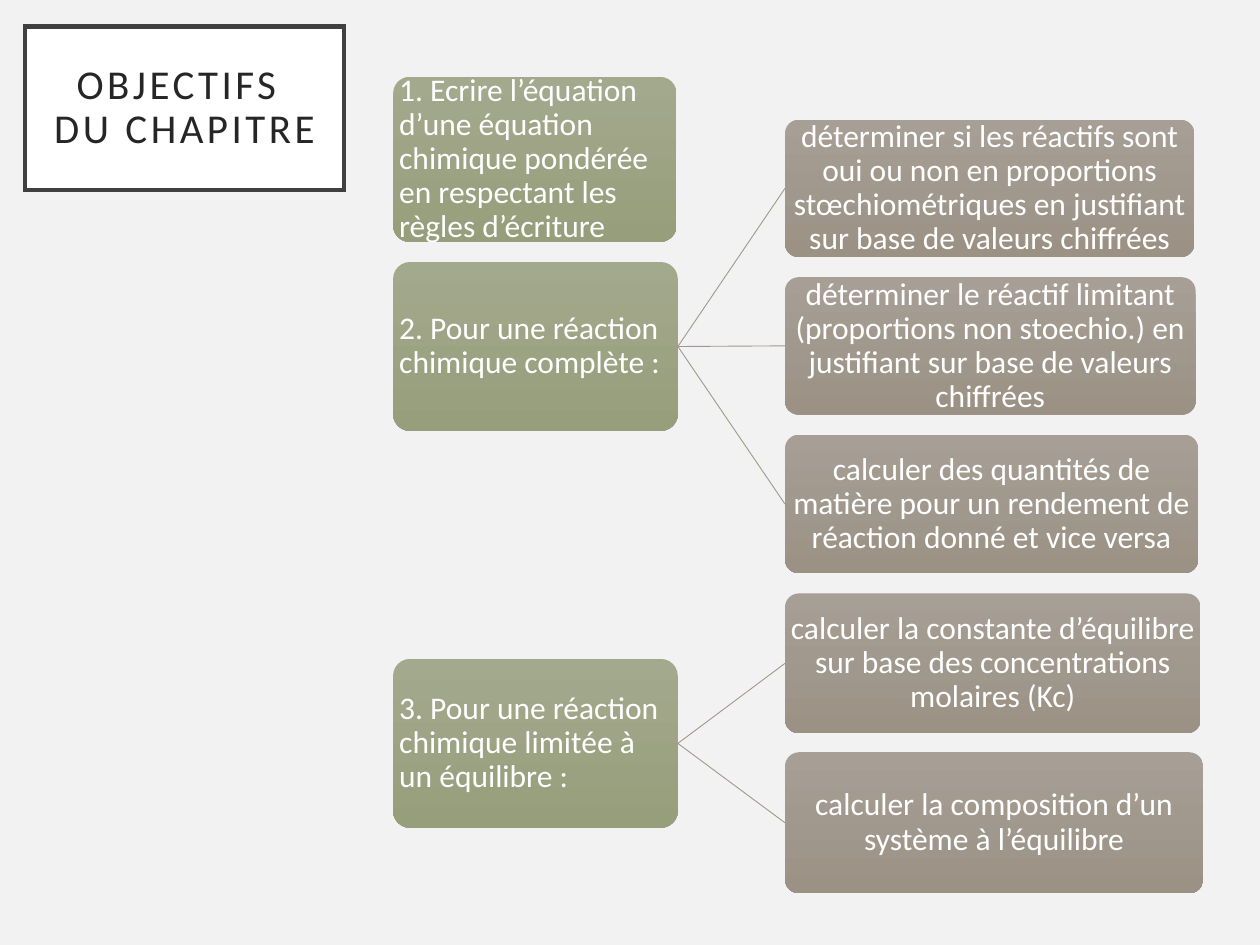
from pptx import Presentation
from pptx.dml.color import RGBColor
from pptx.enum.shapes import MSO_CONNECTOR, MSO_SHAPE
from pptx.enum.text import MSO_ANCHOR, PP_ALIGN
from pptx.oxml.ns import qn
from pptx.util import Inches, Pt
from lxml import etree

RECTANGLE = MSO_SHAPE.RECTANGLE
ROUNDED = MSO_SHAPE.ROUNDED_RECTANGLE
STRAIGHT = MSO_CONNECTOR.STRAIGHT
MIDDLE = MSO_ANCHOR.MIDDLE
LEFT, CENTER = PP_ALIGN.LEFT, PP_ALIGN.CENTER
RIGHT_SIDE, LEFT_SIDE = 3, 1

FONT = "Calibri"
GREEN = ("A3A98C", "979E7C")
TAUPE = ("A79F95", "9B9285")
LINE = "A0988C"

# Each goal: text, box, and its sub-goals as (text, box)
GOALS = [
    ("1. Ecrire l’équation d’une équation chimique pondérée en respectant les règles d’écriture",
     (3.12, 0.61, 2.25, 1.31), []),
    ("2. Pour une réaction chimique complète :", (3.12, 2.08, 2.26, 1.34), [
        ("déterminer si les réactifs sont oui ou non en proportions stœchiométriques "
         "en justifiant sur base de valeurs chiffrées", (6.23, 0.95, 3.25, 1.09)),
        ("déterminer le réactif limitant (proportions non stoechio.) "
         "en justifiant sur base de valeurs chiffrées", (6.23, 2.2, 3.26, 1.09)),
        ("calculer des quantités de matière pour un rendement de réaction donné et vice versa",
         (6.23, 3.45, 3.28, 1.1)),
    ]),
    ("3. Pour une réaction chimique limitée à un équilibre :", (3.12, 5.23, 2.26, 1.34), [
        ("calculer la constante d’équilibre sur base des concentrations molaires (Kc)",
         (6.23, 4.71, 3.3, 1.11)),
        ("calculer la composition d’un système à l’équilibre", (6.23, 5.97, 3.32, 1.12)),
    ]),
]


def color(hex_string):
    return RGBColor.from_string(hex_string)


def add_box(slide, preset, box, text, size, text_color, align, margin):
    shape = slide.shapes.add_shape(preset, *map(Inches, box))
    shape.shadow.inherit = False
    frame = shape.text_frame
    frame.word_wrap = True
    frame.vertical_anchor = MIDDLE
    frame.margin_left = frame.margin_right = Inches(margin)
    frame.margin_top = frame.margin_bottom = Inches(margin)
    paragraph = frame.paragraphs[0]
    paragraph.text = text
    paragraph.alignment = align
    paragraph.line_spacing = 0.9
    paragraph.font.name = FONT
    paragraph.font.size = Pt(size)
    paragraph.font.color.rgb = color(text_color)
    return shape


def add_title(slide, box):
    shape = add_box(slide, RECTANGLE, box, "OBJECTIFS \vDU CHAPITRE",
                    23.4, "262626", CENTER, 0.2)
    shape.fill.solid()
    shape.fill.fore_color.rgb = color("FFFFFF")
    shape.line.color.rgb = color("404040")
    shape.line.width = Pt(2.5)
    # Sharp corners
    outline = shape._element.spPr.find(qn("a:ln"))
    etree.SubElement(outline, qn("a:miter"), lim="800000")
    # Letter spacing of 2 points
    for run in shape.text_frame.paragraphs[0].runs:
        run.font._element.set("spc", "200")


def add_card(slide, box, text, gradient, align):
    shape = add_box(slide, ROUNDED, box, text, 18, "FFFFFF", align, 0.01)
    shape.adjustments[0] = 0.1
    shape.line.fill.background()
    shape.fill.gradient()
    shape.fill.gradient_angle = 270  # top to bottom
    for position, stop in enumerate(shape.fill.gradient_stops):
        stop.color.rgb = color(gradient[position])
        stop.position = position
    return shape


def add_link(slide, parent, child):
    link = slide.shapes.add_connector(STRAIGHT, 0, 0, 0, 0)
    link.begin_connect(parent, RIGHT_SIDE)
    link.end_connect(child, LEFT_SIDE)
    link.line.color.rgb = color(LINE)
    link.line.width = Pt(0.5)
    etree.SubElement(link._element.spPr, qn("a:effectLst"))


def add_goal(slide, box, text, sub_goals):
    parent = add_card(slide, box, text, GREEN, LEFT)
    for sub_text, sub_box in sub_goals:
        child = add_card(slide, sub_box, sub_text, TAUPE, CENTER)
        add_link(slide, parent, child)


def main():
    presentation = Presentation()
    presentation.slide_width = Inches(10)
    presentation.slide_height = Inches(7.5)
    slide = presentation.slides.add_slide(presentation.slide_layouts[6])
    slide.background.fill.solid()
    slide.background.fill.fore_color.rgb = color("F2F2F2")

    add_title(slide, (0.2, 0.21, 2.53, 1.3))
    for text, box, sub_goals in GOALS:
        add_goal(slide, box, text, sub_goals)

    presentation.save("out.pptx")


if __name__ == "__main__":
    main()
